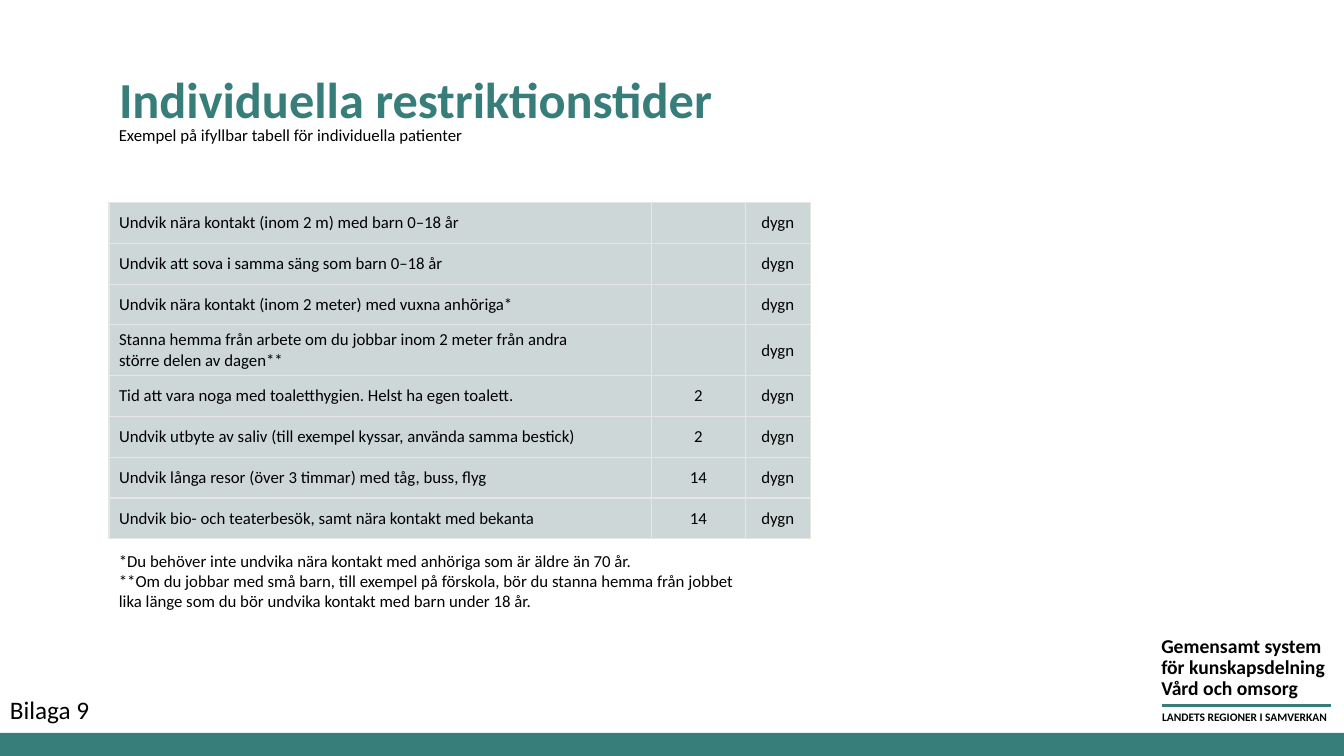
from lxml import etree
from pptx import Presentation
from pptx.dml.color import RGBColor
from pptx.enum.shapes import MSO_CONNECTOR, MSO_SHAPE
from pptx.enum.text import MSO_ANCHOR, MSO_AUTO_SIZE, PP_ALIGN
from pptx.oxml.ns import qn
from pptx.util import Pt

LEFT, CENTER = PP_ALIGN.LEFT, PP_ALIGN.CENTER
TOP, MIDDLE, BOTTOM = MSO_ANCHOR.TOP, MSO_ANCHOR.MIDDLE, MSO_ANCHOR.BOTTOM
NONE = MSO_AUTO_SIZE.NONE
RECT, LINE = MSO_SHAPE.RECTANGLE, MSO_CONNECTOR.STRAIGHT
TEAL, BLACK, CELL, EDGE = "377D7A", "000000", "CED7D7", "E7E6E6"
WIDE, HIGH = 960, 540
MARGIN, SPAN = 77.8, 501

ROWS = [
    ("Undvik nära kontakt (inom 2 m) med barn 0–18 år", ""),
    ("Undvik att sova i samma säng som barn 0–18 år", ""),
    ("Undvik nära kontakt (inom 2 meter) med vuxna anhöriga*", ""),
    ("Stanna hemma från arbete om du jobbar inom 2 meter från andra\n"
     "större delen av dagen**", ""),
    ("Tid att vara noga med toaletthygien. Helst ha egen toalett.", "2"),
    ("Undvik utbyte av saliv (till exempel kyssar, använda samma bestick)", "2"),
    ("Undvik långa resor (över 3 timmar) med tåg, buss, flyg", "14"),
    ("Undvik bio- och teaterbesök, samt nära kontakt med bekanta", "14"),
]
NOTES = (
    "*Du behöver inte undvika nära kontakt med anhöriga som är äldre än 70 år.\n"
    "**Om du jobbar med små barn, till exempel på förskola, bör du stanna hemma från jobbet\n"
    "lika länge som du bör undvika kontakt med barn under 18 år."
)
SENDER = "Gemensamt system\nför kunskapsdelning\nVård och omsorg"


def color(code):
    return RGBColor.from_string(code)


def apply(item, values):
    for name, value in values.items():
        setattr(item, name, value)


def write(frame, text, size=12, bold=False, tint=BLACK, align=LEFT, space=None):
    frame.text = text
    for para in frame.paragraphs:
        apply(para, {"alignment": align, "line_spacing": space})
        apply(para.font, {"name": "Calibri", "size": Pt(size), "bold": bold})
        para.font.color.rgb = color(tint)


def add_title(slide, text, box):
    title = slide.shapes.title
    apply(title, dict(zip(("left", "top", "width", "height"), map(Pt, box))))
    apply(title.text_frame, {"auto_size": NONE, "vertical_anchor": BOTTOM,
                             "word_wrap": True})
    write(title.text_frame, text, 36, True, TEAL, space=0.9)


def add_text(slide, text, box, wrap=True, **style):
    frame = slide.shapes.add_textbox(*map(Pt, box)).text_frame
    apply(frame, {"word_wrap": wrap, "vertical_anchor": TOP})
    write(frame, text, **style)


def add_bar(slide, box):
    bar = slide.shapes.add_shape(RECT, *map(Pt, box))
    bar.shadow.inherit = False
    bar.fill.solid()
    bar.fill.fore_color.rgb = color(TEAL)
    bar.line.fill.background()


def add_rule(slide, ends):
    rule = slide.shapes.add_connector(LINE, *map(Pt, ends))
    rule.line.width = Pt(2.5)
    rule.line.color.rgb = color(TEAL)
    etree.SubElement(rule._element.spPr, qn("a:effectLst"))


def add_edges(cell):
    props = cell._tc.get_or_add_tcPr()
    for place, side in enumerate("LRTB"):
        edge = etree.Element(qn(f"a:ln{side}"), w=str(Pt(1)))
        fill = etree.SubElement(edge, qn("a:solidFill"))
        etree.SubElement(fill, qn("a:srgbClr"), val=EDGE)
        props.insert(place, edge)


def add_grid(slide, box, widths):
    grid = slide.shapes.add_table(len(ROWS), len(widths), *map(Pt, box)).table
    apply(grid, {"first_row": False, "horz_banding": False})
    for col, width in zip(grid.columns, widths):
        col.width = Pt(width)
    for line, (advice, days) in enumerate(ROWS):
        grid.rows[line].height = Pt(36.4 if "\n" in advice else 29.1)
        for col, text in enumerate((advice, days, "dygn")):
            cell = grid.cell(line, col)
            cell.vertical_anchor = MIDDLE
            cell.fill.solid()
            cell.fill.fore_color.rgb = color(CELL)
            write(cell.text_frame, text, align=CENTER if col else LEFT)
            add_edges(cell)


def main():
    deck = Presentation()
    apply(deck, {"slide_width": Pt(WIDE), "slide_height": Pt(HIGH)})
    slide = deck.slides.add_slide(deck.slide_layouts[5])
    add_text(slide, SENDER, (822.4, 451.4, 137, 52.6), wrap=False,
             size=14, bold=True, space=Pt(14.8))
    add_rule(slide, (830, 504, 950.4, 504))
    add_text(slide, "LANDETS REGIONER I SAMVERKAN", (823, 503.4, 136, 17.3),
             wrap=False, size=8.2, bold=True)
    add_bar(slide, (0, 523.5, WIDE, 16.5))
    add_text(slide, "Bilaga 9", (0, 492.5, 72, 29), wrap=False, size=18)
    add_grid(slide, (MARGIN, 144.8, SPAN, 240), (387.4, 67.2, 46.4))
    add_text(slide, NOTES, (MARGIN, 389.5, SPAN, 51))
    add_title(slide, "Individuella restriktionstider", (MARGIN, 48.2, 720, 48.2))
    add_text(slide, "Exempel på ifyllbar tabell för individuella patienter",
             (MARGIN, 85.7, SPAN, 21.8))
    deck.save("out.pptx")


if __name__ == "__main__":
    main()
